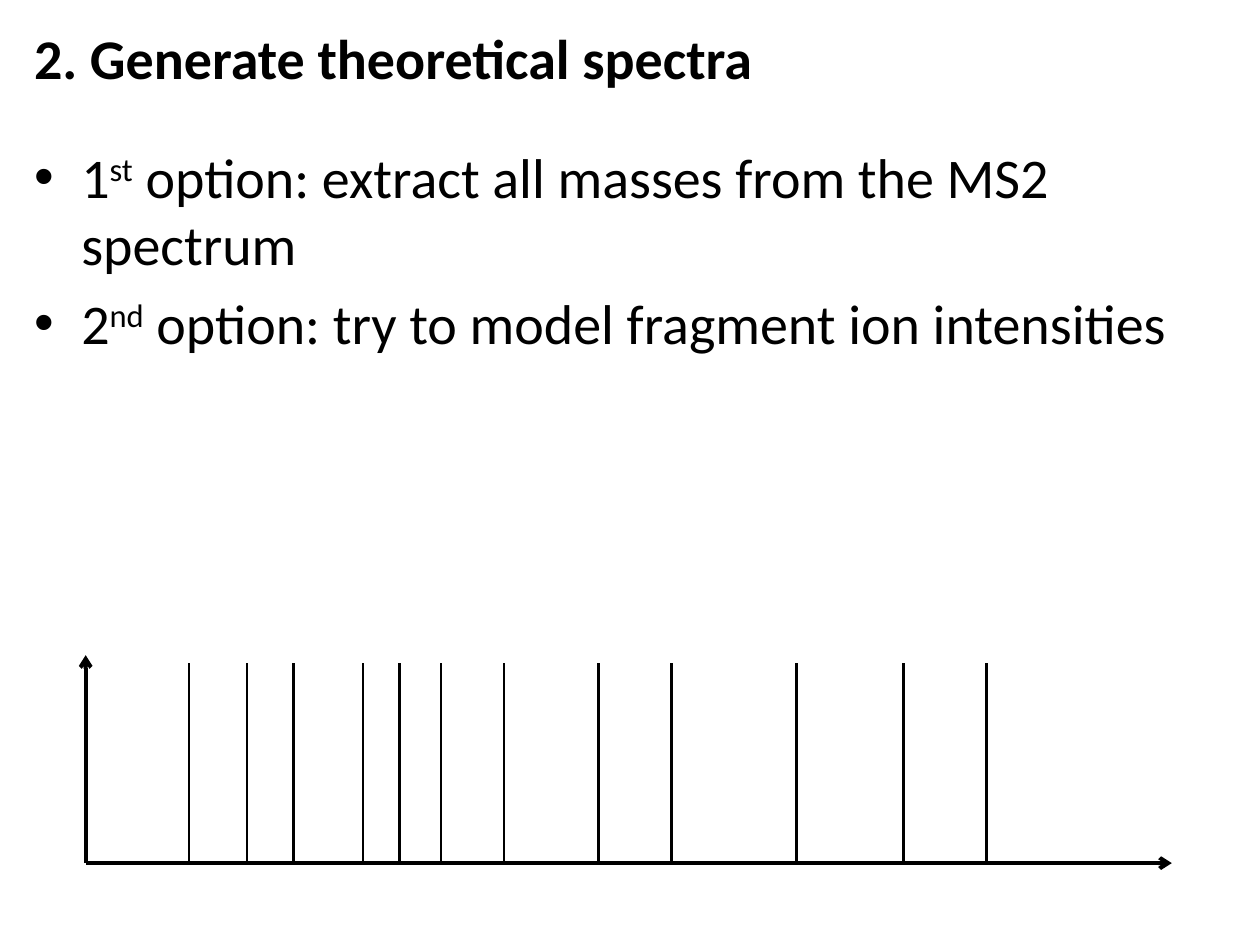
import pptx
import pptx.dml.color
import pptx.enum.shapes
import pptx.enum.text
import pptx.oxml.ns
import pptx.util
from lxml import etree
from pptx.util import Inches

COLORS = {"ink": "000000", "background": "FFFFFF"}
FONT = "Calibri"
AXIS_X, AXIS_Y = 0.68, 6.85
PEAK_TOP = 5.26
PEAKS = [1.5, 1.96, 2.33, 2.88, 3.17, 3.5, 4, 4.75, 5.33, 6.32, 7.17, 7.83]
OPTIONS = [
    ("1", "st", " option: extract all masses from the MS2 spectrum"),
    ("2", "nd", " option: try to model fragment ion intensities"),
]


def rgb(name):
    return pptx.dml.color.RGBColor.from_string(COLORS[name])


def place(sp, left, top, width, height):
    sp.left, sp.top = Inches(left), Inches(top)
    sp.width, sp.height = Inches(width), Inches(height)
    sp.text_frame.auto_size = pptx.enum.text.MSO_AUTO_SIZE.NONE


def format_paragraph(p, bold=False):
    p.alignment = pptx.enum.text.PP_ALIGN.LEFT
    p.font.name = FONT
    p.font.size = pptx.util.Pt(32)
    p.font.bold = bold
    p.font.color.rgb = rgb("ink")


def add_title(s, text):
    sp = s.shapes.title
    place(sp, 0.17, 0.08, 7.33, 0.75)
    sp.text_frame.text = text
    sp.text_frame.vertical_anchor = pptx.enum.text.MSO_ANCHOR.MIDDLE
    format_paragraph(sp.text_frame.paragraphs[0], bold=True)


def add_options(s, options):
    sp = s.placeholders[1]
    place(sp, 0.17, 1.08, 9.66, 5.92)
    tf = sp.text_frame
    for i, (number, ordinal, text) in enumerate(options):
        p = tf.add_paragraph() if i else tf.paragraphs[0]
        format_paragraph(p)
        p.add_run().text = number
        r = p.add_run()
        r.text = ordinal
        r.font._element.set("baseline", "30000")
        p.add_run().text = text


def add_line(s, x1, y1, x2, y2, width, arrow=False):
    line = s.shapes.add_connector(
        pptx.enum.shapes.MSO_CONNECTOR.STRAIGHT,
        Inches(x1), Inches(y1), Inches(x2), Inches(y2))
    line.line.color.rgb = rgb("ink")
    line.line.width = pptx.util.Pt(width)
    if arrow:
        ln = line.line._get_or_add_ln()
        etree.SubElement(ln, pptx.oxml.ns.qn("a:tailEnd"), type="arrow")
    etree.SubElement(line._element.spPr, pptx.oxml.ns.qn("a:effectLst"))


def add_spectrum(s):
    add_line(s, AXIS_X, AXIS_Y, 9.3, AXIS_Y, 2.25, arrow=True)
    for x in PEAKS:
        add_line(s, x, AXIS_Y, x, PEAK_TOP, 1.5)
    add_line(s, AXIS_X, AXIS_Y, AXIS_X, 5.2, 2.25, arrow=True)


def main():
    prs = pptx.Presentation()
    prs.slide_width, prs.slide_height = Inches(10), Inches(7.5)
    s = prs.slides.add_slide(prs.slide_layouts[1])
    s.background.fill.solid()
    s.background.fill.fore_color.rgb = rgb("background")
    add_title(s, "2. Generate theoretical spectra")
    add_options(s, OPTIONS)
    add_spectrum(s)
    prs.save("out.pptx")


if __name__ == "__main__":
    main()
